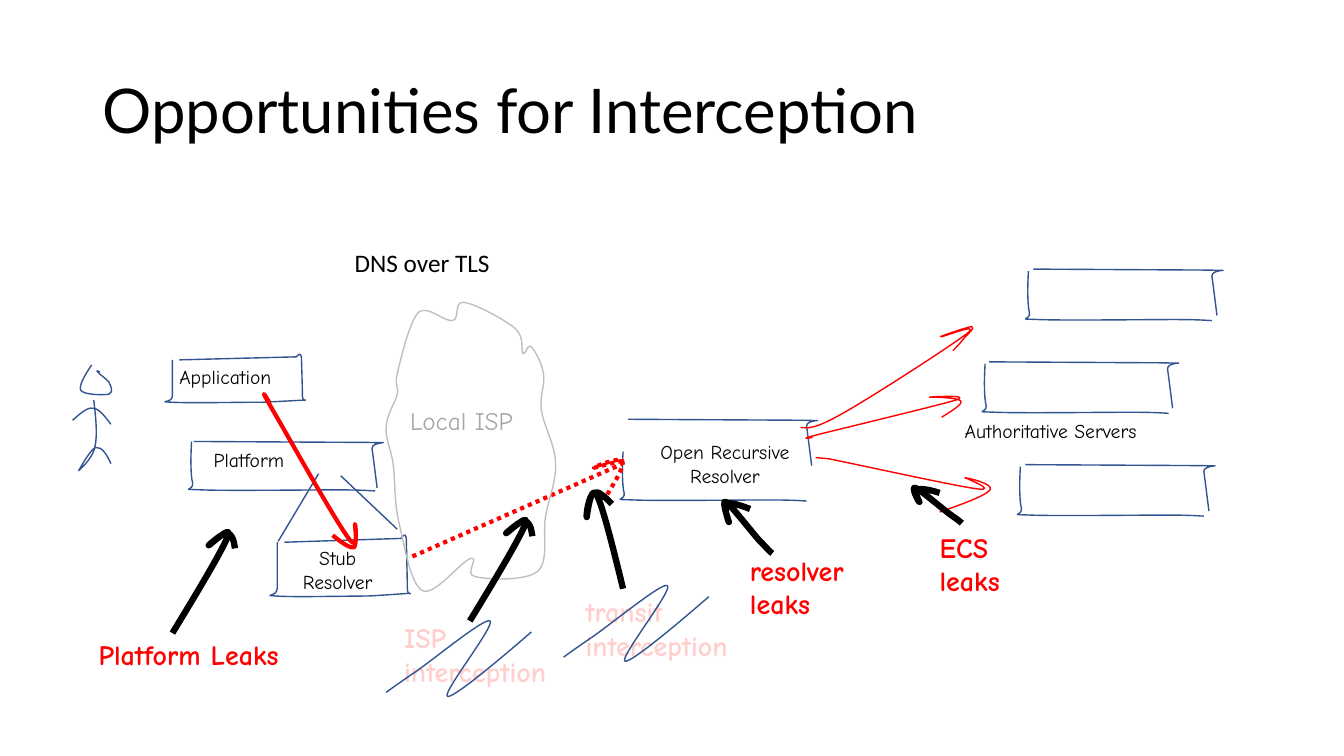
import copy
import dataclasses

import pptx
import pptx.dml.color
import pptx.enum.dml
import pptx.enum.text
import pptx.oxml.ns
import pptx.util

Inches = pptx.util.Inches
qn = pptx.oxml.ns.qn
ALIGN = pptx.enum.text.PP_ALIGN
ANCHOR = pptx.enum.text.MSO_ANCHOR


@dataclasses.dataclass(frozen=True)
class Theme:
    black: str = "000000"
    red: str = "FF0000"
    faded_red: str = "FFCFCE"
    blue: str = "325491"
    cloud: str = "BFBFBF"
    gray: str = "A6A6A6"
    title_font: str = "Lato"
    plain_font: str = "Calibri"
    hand_font: str = "Comic Neue"
    title_size: int = 44
    leak_size: int = 20
    heading_size: int = 18
    label_size: int = 14
    thin: float = 1
    medium: float = 3
    thick: float = 4.5


def set_attributes(target, values):
    for name, value in values.items():
        setattr(target, name, value)


class Sketch:
    def __init__(self, slide, theme):
        self.slide = slide
        self.theme = theme

    def stroke(self, steps, color, width, origin=(0, 0), stretch=1, closed=False, dash=None):
        """Draw a start point, then line ends (x, y) and cubic curves (six numbers)."""
        def place(x, y):
            return Inches(origin[0] + x), Inches(origin[1] + y * stretch)

        ends = [place(*step[-2:]) for step in steps]
        builder = self.slide.shapes.build_freeform(*ends[0])
        builder.add_line_segments(ends[1:], close=closed)
        shape = builder.convert_to_shape()

        # Bend the segments that have control points
        segments = list(shape.element.iter(qn("a:lnTo")))
        for segment, step in zip(segments, steps[1:]):
            if len(step) == 6:
                segment.tag = qn("a:cubicBezTo")
                for index in (0, 1):
                    x, y = place(*step[2 * index:2 * index + 2])
                    control = copy.deepcopy(segment[-1])
                    control.set("x", str(x - shape.left))
                    control.set("y", str(y - shape.top))
                    segment.insert(index, control)

        shape.shadow.inherit = False
        shape.fill.background()
        shape.line.color.rgb = pptx.dml.color.RGBColor.from_string(color)
        set_attributes(shape.line, {"width": pptx.util.Pt(width), "dash_style": dash})

    def text(self, lines, left, top, width, height, size, color, font=None, bold=False,
             align=ALIGN.LEFT, anchor=ANCHOR.TOP, spacing=1.0):
        shape = self.slide.shapes.add_textbox(*map(Inches, (left, top, width, height)))
        frame = shape.text_frame
        set_attributes(frame, {"word_wrap": True, "vertical_anchor": anchor,
                               "text": "\n".join(lines)})
        for paragraph in frame.paragraphs:
            set_attributes(paragraph, {"alignment": align, "line_spacing": spacing})
            run_font = paragraph.runs[0].font
            set_attributes(run_font, {"name": font or self.theme.hand_font,
                                      "size": pptx.util.Pt(size), "bold": bold})
            run_font.color.rgb = pptx.dml.color.RGBColor.from_string(color)


# Hand-drawn outlines, relative to their first point
BOX_TOP = [(0, 0), (1.75, .01), (2.04, .02, 1.76, -.01, 1.77, .07),
           (1.78, .14, 1.8, .3, 1.82, .46)]
BOX_BOTTOM = [(0, 0), (-.01, .17, -.01, .33, .01, .41), (.03, .49, -.14, .47, .1, .48),
              (.34, .49, 1.16, .48, 1.44, .48), (1.73, .48, 1.78, .49, 1.82, .49)]
SMALL_BOX = [(0, 0), (0, .15, 0, .29, 0, .36), (0, .43, -.16, .41, -.01, .42),
             (.14, .43, .68, .42, .9, .42), (1.12, .41, 1.29, .4, 1.29, .4),
             (1.36, .39, 1.29, .43, 1.29, .36), (1.29, .29, 1.28, -.03, 1.28, -.03),
             (1.27, -.09, 1.23, -.03, 1.23, -.03), (.07, 0)]
SCRIBBLE = [(0, 0), (.05, -.04, .27, -.19, .27, -.19), (.45, -.31, .98, -.75, 1.03, -.71),
            (1.09, -.67, .54, .02, .61, .04), (.67, .05, 1.06, -.27, 1.44, -.6)]
LONG_ARROW = [(0, 0), (.25, -.41, .49, -.81, .55, -.96), (.61, -1.1, .36, -.86, .36, -.87),
              (.36, -.87, .5, -1, .54, -.99), (.59, -.99, .61, -.92, .62, -.84)]

# Outlines used once, in slide coordinates
PERSON = [
    [(.91, 3.62), (.84, 3.72, .78, 3.83, .8, 3.87), (.83, 3.92, 1.03, 3.92, 1.08, 3.91),
     (1.13, 3.89, 1.1, 3.83, 1.08, 3.79), (1.06, 3.76, .98, 3.71, .97, 3.69),
     (.95, 3.67, .97, 3.68, .99, 3.69)],
    [(.93, 3.97), (.95, 4.14, .97, 4.32, .94, 4.44), (.92, 4.55, .78, 4.67, .78, 4.67),
     (.78, 4.67, .9, 4.45, .95, 4.44), (1.01, 4.43, 1.06, 4.51, 1.1, 4.6)],
    [(.72, 4.17), (.79, 4.11, .86, 4.04, .92, 4.05), (.98, 4.05, 1.04, 4.13, 1.1, 4.21)],
]
STUB_LINKS = [[(2.76, 5.37), (3.16, 4.7)], [(3.94, 5.25), (3.38, 4.72)]]
APPLICATION_ARROW = [
    (2.67, 3.99), (2.62, 3.91, 2.57, 3.83, 2.7, 4.06), (2.83, 4.28, 3.31, 5.14, 3.45, 5.33),
    (3.58, 5.52, 3.51, 5.18, 3.52, 5.2), (3.53, 5.21, 3.54, 5.41, 3.51, 5.43),
    (3.47, 5.44, 3.38, 5.38, 3.3, 5.31)]
TLS_ARROW = [
    (4.09, 5.52), (4.16, 5.49), (6.11, 4.63), (6.4, 4.49, 5.88, 4.65, 5.89, 4.64),
    (5.89, 4.63, 6.15, 4.53, 6.17, 4.57), (6.2, 4.62, 6.11, 4.76, 6.02, 4.91)]
SERVER_ARROWS = [
    [(7.94, 4.24), (8.01, 4.25, 8.08, 4.26, 8.36, 4.1), (8.63, 3.95, 9.42, 3.44, 9.59, 3.31),
     (9.75, 3.18, 9.32, 3.36, 9.33, 3.34), (9.34, 3.33, 9.61, 3.24, 9.64, 3.24),
     (9.68, 3.25, 9.58, 3.33, 9.55, 3.37), (9.52, 3.41, 9.48, 3.45, 9.45, 3.48)],
    [(8.06, 4.34), (7.99, 4.35, 7.92, 4.36, 8.16, 4.3), (8.4, 4.24, 9.31, 4.02, 9.48, 3.97),
     (9.66, 3.91, 9.21, 3.94, 9.22, 3.94), (9.23, 3.94, 9.51, 3.94, 9.53, 3.98),
     (9.55, 4.01, 9.45, 4.07, 9.34, 4.14)],
    [(8.09, 4.54), (8.21, 4.55), (8.47, 4.6, 9.46, 4.82, 9.69, 4.85),
     (9.92, 4.88, 9.55, 4.73, 9.57, 4.74), (9.6, 4.74, 9.86, 4.8, 9.82, 4.86),
     (9.77, 4.92, 9.55, 5, 9.32, 5.08)],
]
ISP_CLOUD = [
    (5.37, 4.07), (5.35, 3.92, 5.41, 3.82, 5.39, 3.71), (5.38, 3.61, 5.3, 3.47, 5.27, 3.44),
    (5.23, 3.4, 5.21, 3.53, 5.19, 3.51), (5.16, 3.48, 5.21, 3.35, 5.11, 3.26),
    (5.02, 3.18, 4.71, 3.01, 4.6, 3), (4.5, 2.99, 4.56, 3.17, 4.49, 3.18),
    (4.41, 3.2, 4.24, 3.02, 4.15, 3.1), (4.06, 3.19, 3.97, 3.58, 3.94, 3.71),
    (3.91, 3.85, 3.96, 3.82, 3.94, 3.91), (3.92, 4, 3.83, 4.12, 3.83, 4.24),
    (3.82, 4.36, 3.88, 4.45, 3.9, 4.61), (3.92, 4.77, 3.91, 4.99, 3.96, 5.2),
    (4.01, 5.4, 4.07, 5.8, 4.19, 5.86), (4.31, 5.92, 4.58, 5.56, 4.67, 5.54),
    (4.76, 5.52, 4.6, 5.7, 4.71, 5.72), (4.82, 5.75, 5.21, 5.77, 5.33, 5.67),
    (5.45, 5.57, 5.38, 5.3, 5.41, 5.13), (5.44, 4.95, 5.52, 4.77, 5.51, 4.6),
    (5.51, 4.42, 5.39, 4.22, 5.37, 4.07)]
LEAK_ARROWS = [
    [(6.18, 5.84), (6.08, 5.43, 5.98, 5.03, 5.92, 4.91), (5.86, 4.79, 5.82, 5.13, 5.82, 5.13),
     (5.81, 5.12, 5.84, 4.91, 5.89, 4.89), (5.93, 4.86, 6, 4.93, 6.07, 5)],
    [(7.66, 5.49), (7.63, 5.47, 7.61, 5.44, 7.53, 5.36), (7.45, 5.27, 7.25, 5.01, 7.2, 4.98),
     (7.15, 4.95, 7.23, 5.18, 7.23, 5.18), (7.23, 5.19, 7.17, 5.02, 7.21, 5),
     (7.24, 4.98, 7.34, 5.01, 7.44, 5.05)],
    [(9.54, 5.19), (9.52, 5.17, 9.49, 5.15, 9.42, 5.1), (9.34, 5.04, 9.13, 4.86, 9.08, 4.84),
     (9.03, 4.82, 9.11, 4.98, 9.12, 4.98), (9.12, 4.98, 9.06, 4.87, 9.09, 4.86),
     (9.13, 4.84, 9.23, 4.86, 9.32, 4.89)],
]


def main():
    presentation = pptx.Presentation()
    set_attributes(presentation, {"slide_width": Inches(13.33), "slide_height": Inches(7.5)})
    theme = Theme()
    sketch = Sketch(presentation.slides.add_slide(presentation.slide_layouts[6]), theme)

    # Title
    sketch.text(["Opportunities for Interception"], .92, .4, 11.5, 1.45, theme.title_size,
                theme.black, theme.title_font, anchor=ANCHOR.MIDDLE, spacing=.9)

    # Person, boxes and links
    for steps in PERSON + STUB_LINKS:
        sketch.stroke(steps, theme.blue, theme.thin)
    for top, bottom in (((1.92, 4.38), (1.9, 4.38)), ((6.23, 4.16), (6.18, 4.48)),
                        ((10.17, 4.61), (10.12, 4.63)), ((9.81, 3.59), (9.77, 3.61)),
                        ((10.25, 2.67), (10.2, 2.69))):
        sketch.stroke(BOX_TOP, theme.blue, theme.thin, top)
        sketch.stroke(BOX_BOTTOM, theme.blue, theme.thin, bottom)
    for origin, stretch in (((1.71, 3.57), 1), ((2.75, 5.38), 1.27)):
        sketch.stroke(SMALL_BOX, theme.blue, theme.thin, origin, stretch)

    # Box labels
    for lines, place, align in (
            (["Application"], (1.68, 3.57, 1.21, .34), ALIGN.LEFT),
            (["Platform"], (2.02, 4.39, 1.1, .34), ALIGN.LEFT),
            (["Stub Resolver"], (2.76, 5.37, 1.18, .57), ALIGN.CENTER),
            (["Open Recursive", "Resolver"], (6.3, 4.32, 1.78, .57), ALIGN.CENTER),
            (["Authoritative Servers"], (9.47, 4.11, 2.4, .34), ALIGN.JUSTIFY)):
        sketch.text(lines, *place, theme.label_size, theme.black, align=align)

    # Query arrows and the ISP cloud
    sketch.stroke(APPLICATION_ARROW, theme.red, theme.medium)
    sketch.stroke(TLS_ARROW, theme.red, theme.medium, dash=pptx.enum.dml.MSO_LINE.ROUND_DOT)
    for steps in SERVER_ARROWS:
        sketch.stroke(steps, theme.red, theme.thin)
    sketch.stroke(ISP_CLOUD, theme.cloud, theme.thin, closed=True)
    sketch.text(["Local ISP"], 3.97, 3.97, 1.48, .4, theme.heading_size, theme.gray)
    sketch.text(["DNS over TLS"], 3.42, 2.4, 1.56, .4, theme.heading_size, theme.black,
                theme.plain_font)

    # Leak labels, their arrows and the crossings-out
    for lines, place, color in (
            (["Platform Leaks"], (.88, 6.28, 2.47, .44), theme.red),
            (["ISP", "interception"], (3.91, 6.11, 1.86, .77), theme.faded_red),
            (["transit", "interception"], (5.71, 5.85, 1.86, .77), theme.faded_red),
            (["resolver", "leaks"], (7.34, 5.44, 1.34, .77), theme.red),
            (["ECS", "leaks"], (9.22, 5.21, .93, .77), theme.red)):
        sketch.text(lines, *place, theme.leak_size, color, bold=True)
    for origin in ((1.71, 6.28), (4.66, 6.16)):
        sketch.stroke(LONG_ARROW, theme.black, theme.thick, origin)
    for steps in LEAK_ARROWS:
        sketch.stroke(steps, theme.black, theme.thick)
    for origin in ((3.83, 6.87), (5.59, 6.52)):
        sketch.stroke(SCRIBBLE, theme.blue, theme.thin, origin)

    presentation.save("out.pptx")


if __name__ == "__main__":
    main()
